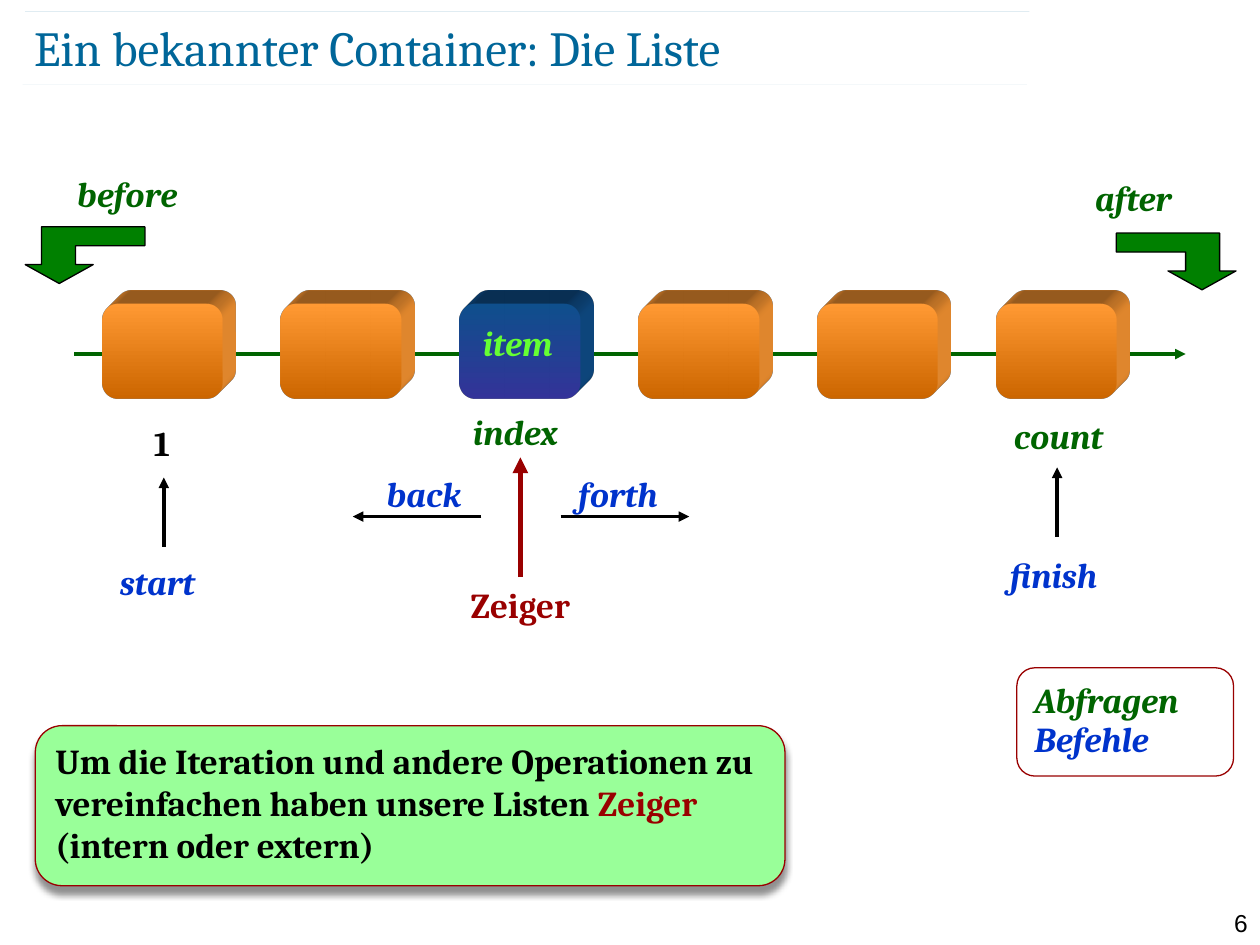
from lxml import etree
from pptx import Presentation
from pptx.dml.color import RGBColor
from pptx.enum.shapes import MSO_CONNECTOR, MSO_SHAPE
from pptx.enum.text import MSO_ANCHOR, PP_ALIGN
from pptx.oxml import parse_xml
from pptx.oxml.ns import nsdecls, qn
from pptx.util import Inches, Pt

COLORS = {
    "title": "006699", "query": "006400", "command": "0033CC", "pointer": "990000",
    "black": "000000", "item": "66FF33", "arrow": "008000", "note": "99FF99",
    "cube_top": "FF9933", "cube_bottom": "CC6600",
    "item_top": "0F4F8C", "item_bottom": "333399",
}
RGB = {name: RGBColor.from_string(value) for name, value in COLORS.items()}

presentation = Presentation()
presentation.slide_width, presentation.slide_height = Inches(10), Inches(7.5)
slide = presentation.slides.add_slide(presentation.slide_layouts[6])


def add_label(text, left, top, width, height, color, italic=True):
    box = slide.shapes.add_textbox(Inches(left), Inches(top), Inches(width), Inches(height))
    box.text_frame.word_wrap = True
    paragraph = box.text_frame.paragraphs[0]
    paragraph.text = text
    paragraph.alignment = PP_ALIGN.CENTER
    font = paragraph.font
    font.name, font.size, font.bold, font.italic = "Cambria", Pt(20), True, italic
    font.color.rgb = RGB[color]
    return box


def add_line(start, end, color, width, arrow=True):
    line = slide.shapes.add_connector(
        MSO_CONNECTOR.STRAIGHT, *(Inches(value) for value in start + end))
    line.line.color.rgb = RGB[color]
    line.line.width = Pt(width)
    if arrow:
        etree.SubElement(line.line._get_or_add_ln(), qn("a:tailEnd"), type="triangle")
    etree.SubElement(line._element.spPr, qn("a:effectLst"))
    return line


# Title between two faint rules
for left, y in ((0.18, 0.67), (0.2, 0.09)):
    rule = add_line((left, y), (left + 7.97, y), "title", 0.1, arrow=False)
    for color_element in rule._element.spPr.iter(qn("a:srgbClr")):
        etree.SubElement(color_element, qn("a:alpha"), val="35000")

title = slide.shapes.add_textbox(Inches(0.27), Inches(0.13), Inches(8.69), Inches(0.48))
frame = title.text_frame
frame.word_wrap = True
frame.vertical_anchor = MSO_ANCHOR.MIDDLE
frame.margin_left = frame.margin_right = frame.margin_top = frame.margin_bottom = 0
paragraph = frame.paragraphs[0]
paragraph.text = "Ein bekannter Container: Die Liste"
paragraph.font.name, paragraph.font.size = "Cambria", Pt(28)
paragraph.font.color.rgb = RGB["title"]

# List elements, extruded, on their axis
add_line((0.59, 2.81), (9.41, 2.81), "query", 2)
for index in range(6):
    kind = "item" if index == 2 else "cube"
    cube = slide.shapes.add_shape(
        MSO_SHAPE.ROUNDED_RECTANGLE,
        Inches(0.81 + 1.42 * index), Inches(2.41), Inches(0.95), Inches(0.75))
    cube.shadow.inherit = False
    cube.line.fill.background()
    cube.fill.gradient()
    cube.fill.gradient_angle = 270
    for stop, end in zip(cube.fill.gradient_stops, ("top", "bottom")):
        stop.color.rgb = RGB[f"{kind}_{end}"]
    properties = cube._element.spPr
    properties.append(parse_xml(
        f'<a:scene3d {nsdecls("a")}><a:camera prst="legacyObliqueTopRight"/>'
        '<a:lightRig rig="legacyFlat3" dir="b"/></a:scene3d>'))
    properties.append(parse_xml(
        f'<a:sp3d {nsdecls("a")} extrusionH="277800" prstMaterial="legacyMatte">'
        '<a:extrusionClr><a:srgbClr val="%s"/></a:extrusionClr></a:sp3d>'
        % COLORS[f"{kind}_top"]))

# Bent arrows to the positions before and after the list
BENT_ARROW = [(0.27, 0.45), (0.54, 0.3), (0.4, 0.3), (0.4, 0.15), (0.95, 0.15),
              (0.95, 0), (0.13, 0), (0.13, 0.3), (0, 0.3)]
for origin, top, direction in ((0.2, 1.8, 1), (9.81, 1.85, -1)):
    points = [(Inches(origin + direction * x), Inches(top + y)) for x, y in BENT_ARROW]
    builder = slide.shapes.build_freeform(*points[0])
    builder.add_line_segments(points[1:])
    bent_arrow = builder.convert_to_shape()
    bent_arrow.shadow.inherit = False
    bent_arrow.fill.solid()
    bent_arrow.fill.fore_color.rgb = RGB["arrow"]
    bent_arrow.line.color.rgb = RGB["black"]
    bent_arrow.line.width = Pt(0.75)

for text, left, top, width, color in (
    ("before", 0.3, 1.32, 1.42, "query"),
    ("after", 8.54, 1.35, 0.91, "query"),
    ("item", 3.66, 2.5, 0.9, "item"),
    ("index", 3.62, 3.21, 0.94, "query"),
    ("count", 7.88, 3.24, 1.04, "query"),
    ("back", 2.91, 3.7, 0.91, "command"),
    ("forth", 4.45, 3.7, 0.91, "command"),
    ("start", 0.66, 4.4, 1.18, "command"),
    ("finish", 7.77, 4.34, 1.18, "command"),
):
    add_label(text, left, top, width, 0.43, color)
add_label("1", 0.83, 3.3, 0.91, 0.43, "black", italic=False)
pointer_label = add_label("Zeiger", 3.42, 4.58, 1.42, 0.43, "pointer", italic=False)

pointer = add_line((4.13, 4.58), (4.13, 3.63), "pointer", 3)
pointer.begin_connect(pointer_label, 0)
for start, end in (
    ((3.82, 4.1), (2.8, 4.1)),
    ((4.45, 4.1), (5.47, 4.1)),
    ((1.3, 4.34), (1.3, 3.79)),
    ((8.39, 4.26), (8.39, 3.71)),
):
    add_line(start, end, "black", 2)

# Note and legend
note, legend = (
    slide.shapes.add_shape(MSO_SHAPE.ROUNDED_RECTANGLE, *(Inches(value) for value in bounds))
    for bounds in ((0.28, 5.76, 5.95, 1.27), (8.07, 5.3, 1.72, 0.86)))
for box in (note, legend):
    box.shadow.inherit = False
    box.line.color.rgb = RGB["pointer"]
    box.line.width = Pt(0.75)
    box.text_frame.word_wrap = True
    box.text_frame.vertical_anchor = MSO_ANCHOR.TOP

note.fill.solid()
note.fill.fore_color.rgb = RGB["note"]
note._element.spPr.find(qn("a:effectLst")).append(parse_xml(
    f'<a:outerShdw {nsdecls("a")} blurRad="50800" dist="50800" dir="5400000" rotWithShape="0">'
    '<a:srgbClr val="000000"><a:alpha val="43000"/></a:srgbClr></a:outerShdw>'))
paragraph = note.text_frame.paragraphs[0]
paragraph.alignment = PP_ALIGN.LEFT
paragraph.font.name, paragraph.font.size, paragraph.font.bold = "Cambria", Pt(20), True
for text, color in (
    ("Um die Iteration und andere Operationen zu vereinfachen haben unsere Listen ", "black"),
    ("Zeiger ", "pointer"),
    ("(intern oder extern)", "black"),
):
    run = paragraph.add_run()
    run.text = text
    run.font.color.rgb = RGB[color]

legend.fill.background()
legend.text_frame.margin_top = Inches(0.16)
legend.text_frame.text = "Abfragen\nBefehle"
for paragraph, color in zip(legend.text_frame.paragraphs, ("query", "command")):
    paragraph.alignment = PP_ALIGN.LEFT
    paragraph.line_spacing = 0.6
    font = paragraph.font
    font.name, font.size, font.bold, font.italic = "Cambria", Pt(20), True, True
    font.color.rgb = RGB[color]
legend.text_frame.paragraphs[1].space_before = Pt(8)

# Slide number
number = slide.shapes.add_textbox(Inches(9.45), Inches(7.16), Inches(0.55), Inches(0.24))
paragraph = number.text_frame.paragraphs[0]
paragraph.text = "6"
paragraph.alignment = PP_ALIGN.RIGHT
paragraph.font.name, paragraph.font.size = "Arial", Pt(14)
paragraph.font.color.rgb = RGB["black"]
number.text_frame.word_wrap = True

presentation.save("out.pptx")
